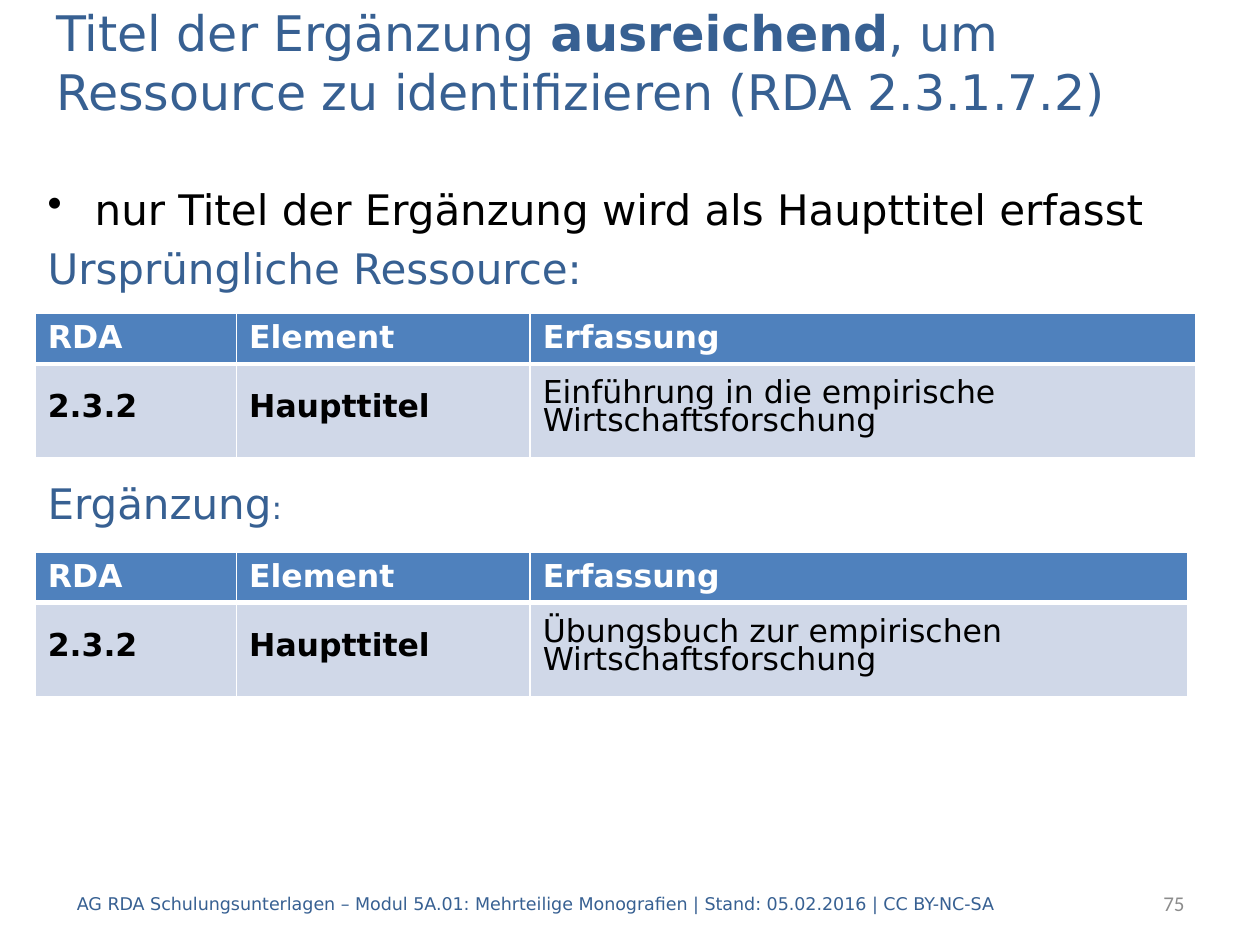
"""Build the slide on recording the title of a supplement under RDA 2.3.1.7.2."""
import lxml.etree
import pptx
import pptx.dml.color
import pptx.enum.text
import pptx.oxml
import pptx.oxml.ns
import pptx.util
from pptx.util import Cm, Pt

RGBColor = pptx.dml.color.RGBColor
MIDDLE = pptx.enum.text.MSO_ANCHOR.MIDDLE
TOP = pptx.enum.text.MSO_ANCHOR.TOP
BLUE = RGBColor(0x37, 0x60, 0x92)
HEADER_FILL = RGBColor(0x4F, 0x81, 0xBD)
BODY_FILL = RGBColor(0xD0, 0xD8, 0xE8)
BLACK = RGBColor(0, 0, 0)
WHITE = RGBColor(255, 255, 255)
GREY = RGBColor(0x8C, 0x8C, 0x8C)


def style(paragraph, size, color, bold=False, name="DejaVu Sans"):
    paragraph.font.size = Pt(size)
    paragraph.font.color.rgb = color
    paragraph.font.bold = bold
    paragraph.font.name = name


def add_text(left, top, width, height, anchor):
    frame = slide.shapes.add_textbox(Cm(left), Cm(top), Cm(width), Cm(height)).text_frame
    frame.word_wrap = True
    frame.vertical_anchor = anchor
    return frame


presentation = pptx.Presentation()
presentation.slide_width = Cm(25.4)
presentation.slide_height = Cm(19.05)
slide = presentation.slides.add_slide(presentation.slide_layouts[6])

title = add_text(0.89, 0.53, 24, 1.42, MIDDLE).paragraphs[0]
style(title, 28, BLUE)
title.add_run().text = "Titel der Ergänzung "
emphasis = title.add_run()
emphasis.text = "ausreichend"
emphasis.font.bold = True
title.add_run().text = ", um Ressource zu identifizieren (RDA 2.3.1.7.2)"

body = add_text(0.71, 3.58, 24, 2.41, TOP)
bullet = body.paragraphs[0]
bullet.text = "nur Titel der Ergänzung wird als Haupttitel erfasst"
style(bullet, 24, BLACK)
properties = bullet._p.get_or_add_pPr()
properties.set("marL", str(Cm(0.95)))
properties.set("indent", str(-Cm(0.95)))
bullet_character = pptx.oxml.parse_xml(
    f'<a:buChar {pptx.oxml.ns.nsdecls("a")} char="•"/>')
properties.insert_element_before(bullet_character, "a:tabLst", "a:defRPr", "a:extLst")
resource = body.add_paragraph()
resource.text = "Ursprüngliche Ressource:"
resource.space_before = Pt(5)
style(resource, 24, BLUE)

supplement = add_text(0.71, 9.5, 24, 1.24, TOP).paragraphs[0]
style(supplement, 24, BLUE)
supplement.add_run().text = "Ergänzung"
colon = supplement.add_run()
colon.text = ":"
colon.font.size = Pt(18)

footer = add_text(1.3, 17.7, 21.21, 1.02, MIDDLE).paragraphs[0]
footer.text = ("AG RDA Schulungsunterlagen – Modul 5A.01: Mehrteilige Monografien"
               " | Stand: 05.02.2016 | CC BY-NC-SA")
style(footer, 10, BLUE)

page_number = add_text(20.09, 17.7, 4.04, 1.02, MIDDLE).paragraphs[0]
page_number.text = "75"
page_number.alignment = pptx.enum.text.PP_ALIGN.RIGHT
style(page_number, 12, GREY, name="Calibri")

ROW_HEIGHTS = (0.94, 1.9)
HEADINGS = ("RDA", "Element", "Erfassung")
TABLES = (
    (6.32, 13.41, "Einführung in die empirische Wirtschaftsforschung"),
    (11.13, 13.26, "Übungsbuch zur empirischen Wirtschaftsforschung"),
)
for top, last_width, recorded_title in TABLES:
    widths = (4.06, 5.92, last_width)
    table = slide.shapes.add_table(
        2, 3, Cm(0.71), Cm(top), Cm(sum(widths)), Cm(sum(ROW_HEIGHTS))).table
    table.horz_banding = False
    for column, width in zip(table.columns, widths):
        column.width = Cm(width)
    for row, height in zip(table.rows, ROW_HEIGHTS):
        row.height = Cm(height)
    rows = (HEADINGS, ("2.3.2", "Haupttitel", recorded_title))
    for row_index, texts in enumerate(rows):
        is_header = row_index == 0
        for column_index, text in enumerate(texts):
            cell = table.cell(row_index, column_index)
            cell.text = text
            paragraph = cell.text_frame.paragraphs[0]
            if is_header:
                style(paragraph, 18, WHITE, bold=True)
            else:
                style(paragraph, 18, BLACK, bold=column_index < 2)
                cell.vertical_anchor = MIDDLE
                paragraph.line_spacing = Pt(16)
                paragraph.space_before = paragraph.space_after = Pt(6)
            cell.fill.solid()
            cell.fill.fore_color.rgb = HEADER_FILL if is_header else BODY_FILL
            cell_properties = cell._tc.get_or_add_tcPr()
            for position, side in enumerate("LRTB"):
                meets_header_rule = side == ("B" if is_header else "T")
                border = pptx.oxml.parse_xml(
                    f'<a:ln{side} {pptx.oxml.ns.nsdecls("a")}'
                    f' w="{Pt(3 if meets_header_rule else 1)}">'
                    f'<a:solidFill><a:srgbClr val="{WHITE}"/></a:solidFill></a:ln{side}>')
                cell_properties.insert(position, border)

presentation.save("out.pptx")
